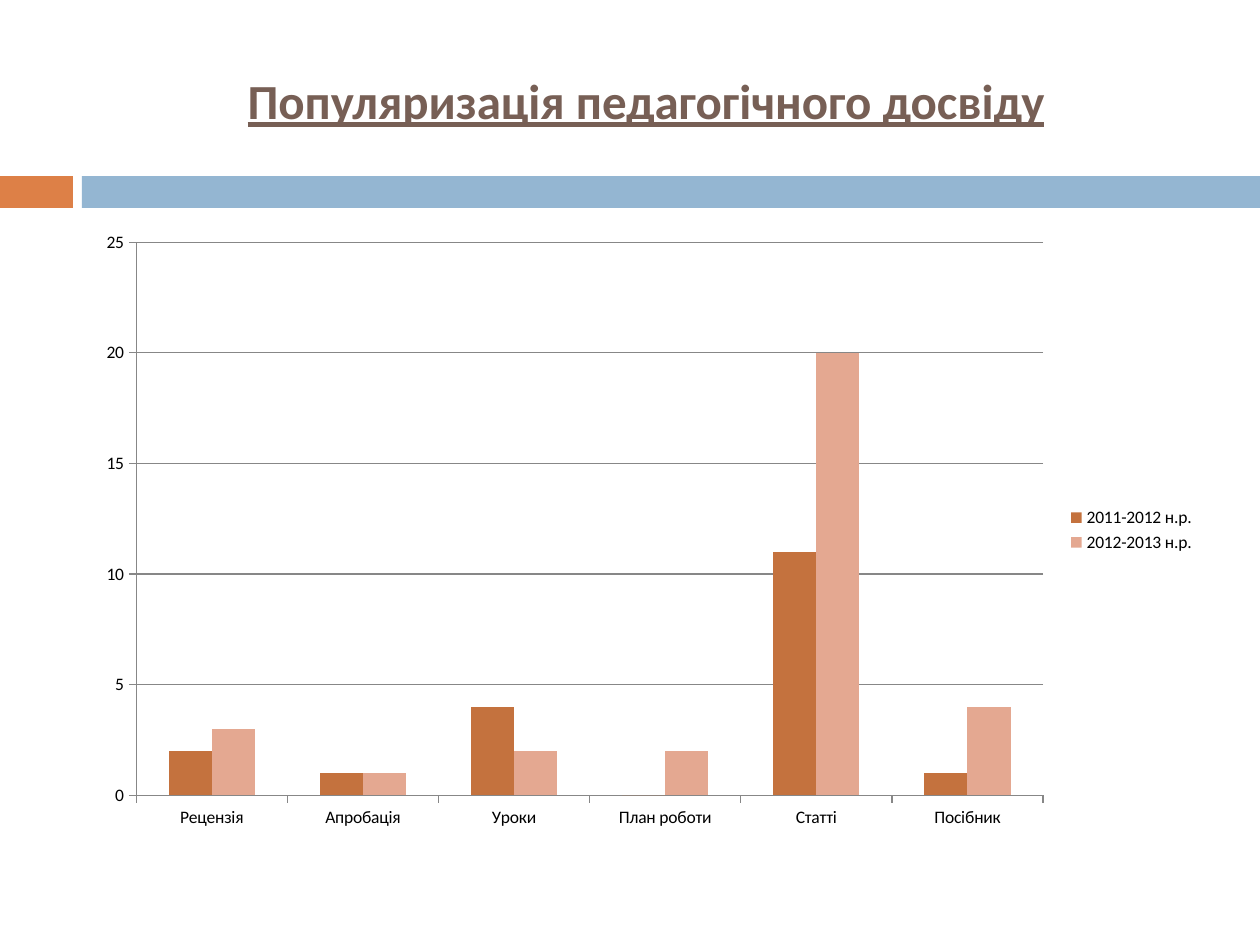
"""Build a slide with a clustered column chart of shared teaching experience."""
import dataclasses

import pptx
import pptx.chart.data
import pptx.dml.color
import pptx.enum.chart
import pptx.enum.shapes
import pptx.enum.text
import pptx.util

PX = pptx.util.Inches(1) // 126
FONT = "Calibri"
AXIS_COLOR = "878787"


@dataclasses.dataclass(frozen=True)
class Box:
    left: int
    top: int
    width: int
    height: int

    def emu(self) -> tuple[int, ...]:
        return tuple(length * PX for length in dataclasses.astuple(self))


@dataclasses.dataclass(frozen=True)
class Band:
    box: Box
    color: str


@dataclasses.dataclass(frozen=True)
class YearSeries:
    name: str
    values: tuple[int, ...]
    color: str


BANDS = (
    Band(Box(0, 176, 73, 32), "DD8047"),
    Band(Box(82, 176, 1178, 32), "94B6D2"),
)
TITLE_BOX = Box(84, 32, 1124, 136)
CHART_BOX = Box(84, 220, 1124, 620)
CATEGORIES = ("Рецензія", "Апробація", "Уроки", "План роботи", "Статті", "Посібник")
YEARS = (
    YearSeries("2011-2012 н.р.", (2, 1, 4, 0, 11, 1), "C4723E"),
    YearSeries("2012-2013 н.р.", (3, 1, 2, 2, 20, 4), "E4A891"),
)


def rgb(color: str) -> pptx.dml.color.RGBColor:
    return pptx.dml.color.RGBColor.from_string(color)


def style_font(font, size: int, color: str) -> None:
    font.name = FONT
    font.size = pptx.util.Pt(size)
    font.color.rgb = rgb(color)


def style_line(line) -> None:
    line.color.rgb = rgb(AXIS_COLOR)
    line.width = pptx.util.Pt(0.75)


def add_band(slide, band: Band) -> None:
    shape = slide.shapes.add_shape(
        pptx.enum.shapes.MSO_SHAPE.RECTANGLE, *band.box.emu()
    )
    shape.shadow.inherit = False
    shape.fill.solid()
    shape.fill.fore_color.rgb = rgb(band.color)
    shape.line.fill.background()


def add_title(slide, text: str) -> None:
    frame = slide.shapes.add_textbox(*TITLE_BOX.emu()).text_frame
    frame.word_wrap = True
    frame.vertical_anchor = pptx.enum.text.MSO_ANCHOR.MIDDLE
    paragraph = frame.paragraphs[0]
    paragraph.text = text
    paragraph.alignment = pptx.enum.text.PP_ALIGN.CENTER
    style_font(paragraph.font, 28, "775F55")
    paragraph.font.bold = True
    paragraph.font.underline = True


def add_column_chart(slide) -> None:
    data = pptx.chart.data.CategoryChartData()
    data.categories = CATEGORIES
    for year in YEARS:
        data.add_series(year.name, year.values)
    chart = slide.shapes.add_chart(
        pptx.enum.chart.XL_CHART_TYPE.COLUMN_CLUSTERED, *CHART_BOX.emu(), data
    ).chart
    style_font(chart.font, 10, "000000")
    chart.has_title = False
    chart.has_legend = True
    chart.legend.position = pptx.enum.chart.XL_LEGEND_POSITION.RIGHT
    chart.legend.include_in_layout = False

    plot = chart.plots[0]
    plot.vary_by_categories = False
    plot.gap_width = 150
    plot.overlap = 0
    for series, year in zip(plot.series, YEARS):
        series.format.fill.solid()
        series.format.fill.fore_color.rgb = rgb(year.color)

    for axis in (chart.category_axis, chart.value_axis):
        axis.major_tick_mark = pptx.enum.chart.XL_TICK_MARK.OUTSIDE
        axis.minor_tick_mark = pptx.enum.chart.XL_TICK_MARK.NONE
        style_line(axis.format.line)
    chart.value_axis.minimum_scale = 0
    chart.value_axis.maximum_scale = 25
    chart.value_axis.major_unit = 5
    chart.value_axis.has_major_gridlines = True
    style_line(chart.value_axis.major_gridlines.format.line)


def main() -> None:
    presentation = pptx.Presentation()
    presentation.slide_width = 1260 * PX
    presentation.slide_height = 945 * PX
    slide = presentation.slides.add_slide(presentation.slide_layouts[6])
    for band in BANDS:
        add_band(slide, band)
    add_title(slide, "Популяризація педагогічного досвіду")
    add_column_chart(slide)
    presentation.save("out.pptx")


if __name__ == "__main__":
    main()
